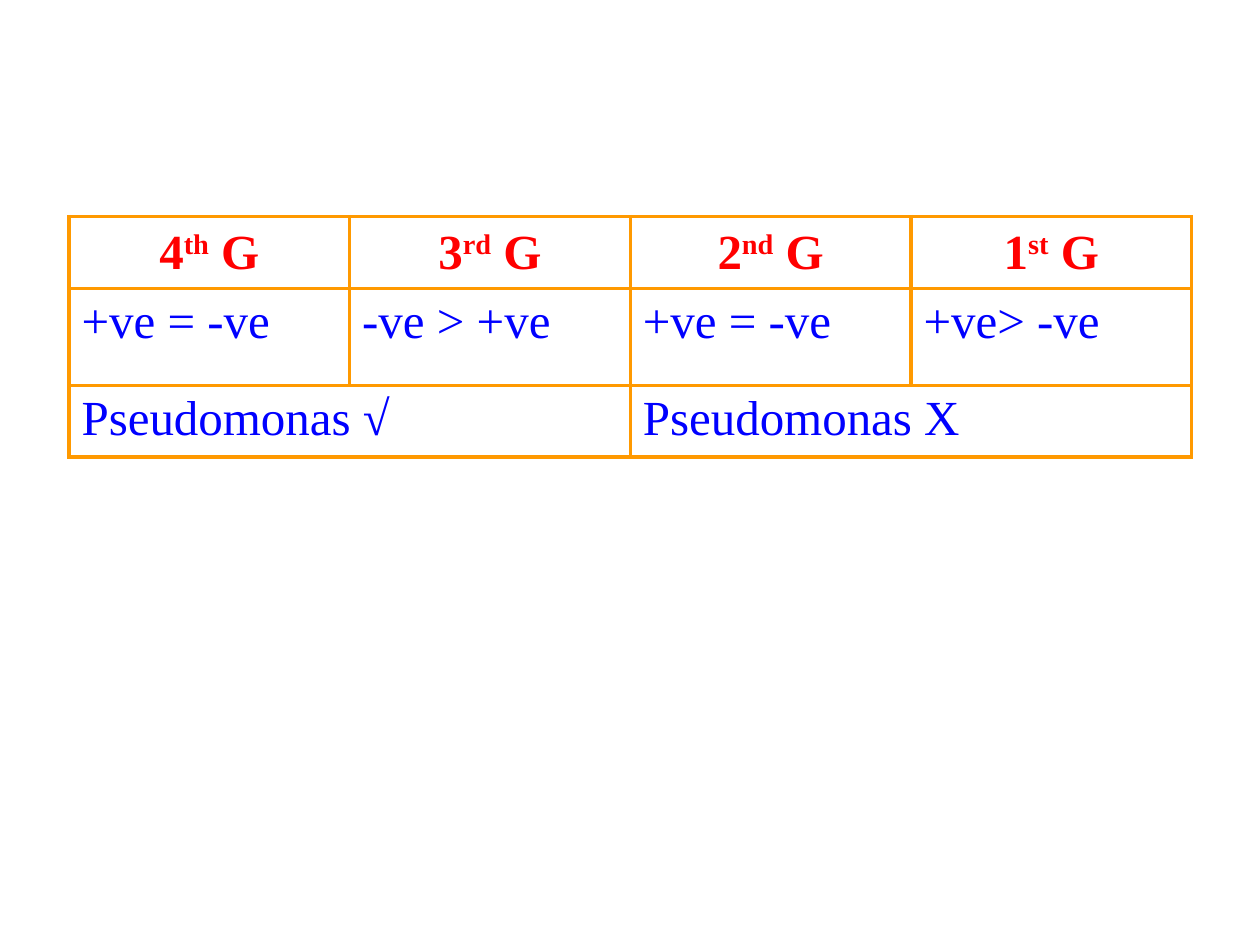
from dataclasses import dataclass

from lxml import etree
from pptx import Presentation
from pptx.dml.color import RGBColor
from pptx.enum import text
from pptx.oxml import ns
from pptx.util import Pt


@dataclass
class Theme:
    font: str = "Times New Roman"
    size: float = 28
    heading: str = "FF0000"
    body: str = "0000FF"
    border: str = "FF9900"
    border_width: float = 2.25


theme = Theme()


def write(paragraph, content, color=theme.body, bold=False, raised=False):
    run = paragraph.add_run()
    run.text = content
    run.font.name = theme.font
    run.font.size = Pt(theme.size)
    run.font.bold = bold
    run.font.color.rgb = RGBColor.from_string(color)
    if raised:
        run.font._element.set("baseline", "30000")


def outline(cell):
    properties = cell._tc.get_or_add_tcPr()
    for side in ("lnL", "lnR", "lnT", "lnB"):
        line = etree.SubElement(properties, ns.qn(f"a:{side}"), w=str(Pt(theme.border_width)))
        fill = etree.SubElement(line, ns.qn("a:solidFill"))
        etree.SubElement(fill, ns.qn("a:srgbClr"), val=theme.border)
    cell.fill.background()


generations = [("4", "th"), ("3", "rd"), ("2", "nd"), ("1", "st")]
coverage = ["+ve = -ve", "-ve > +ve", "+ve = -ve", "+ve> -ve"]
pseudomonas = ["Pseudomonas √", "Pseudomonas X"]
row_heights = [41, 55.5, 41]
column_width = 160.4

deck = Presentation()
deck.slide_width, deck.slide_height = Pt(720), Pt(540)
slide = deck.slides.add_slide(deck.slide_layouts[6])

spectrum = slide.shapes.add_table(
    len(row_heights), len(generations), Pt(39.4), Pt(123.8),
    Pt(column_width * len(generations)), Pt(sum(row_heights))).table
spectrum.first_row = False
spectrum.horz_banding = False
for column in spectrum.columns:
    column.width = Pt(column_width)
for row, height in zip(spectrum.rows, row_heights):
    row.height = Pt(height)
for cell in spectrum.iter_cells():
    outline(cell)

for index, (number, suffix) in enumerate(generations):
    heading = spectrum.cell(0, index)
    heading.vertical_anchor = text.MSO_ANCHOR.MIDDLE
    paragraph = heading.text_frame.paragraphs[0]
    paragraph.alignment = text.PP_ALIGN.CENTER
    for part in (number, suffix, " G"):
        write(paragraph, part, color=theme.heading, bold=True, raised=part == suffix)

for index, balance in enumerate(coverage):
    write(spectrum.cell(1, index).text_frame.paragraphs[0], balance)

for index, activity in enumerate(pseudomonas):
    first = spectrum.cell(2, index * 2)
    first.merge(spectrum.cell(2, index * 2 + 1))
    write(first.text_frame.paragraphs[0], activity)

deck.save("out.pptx")
